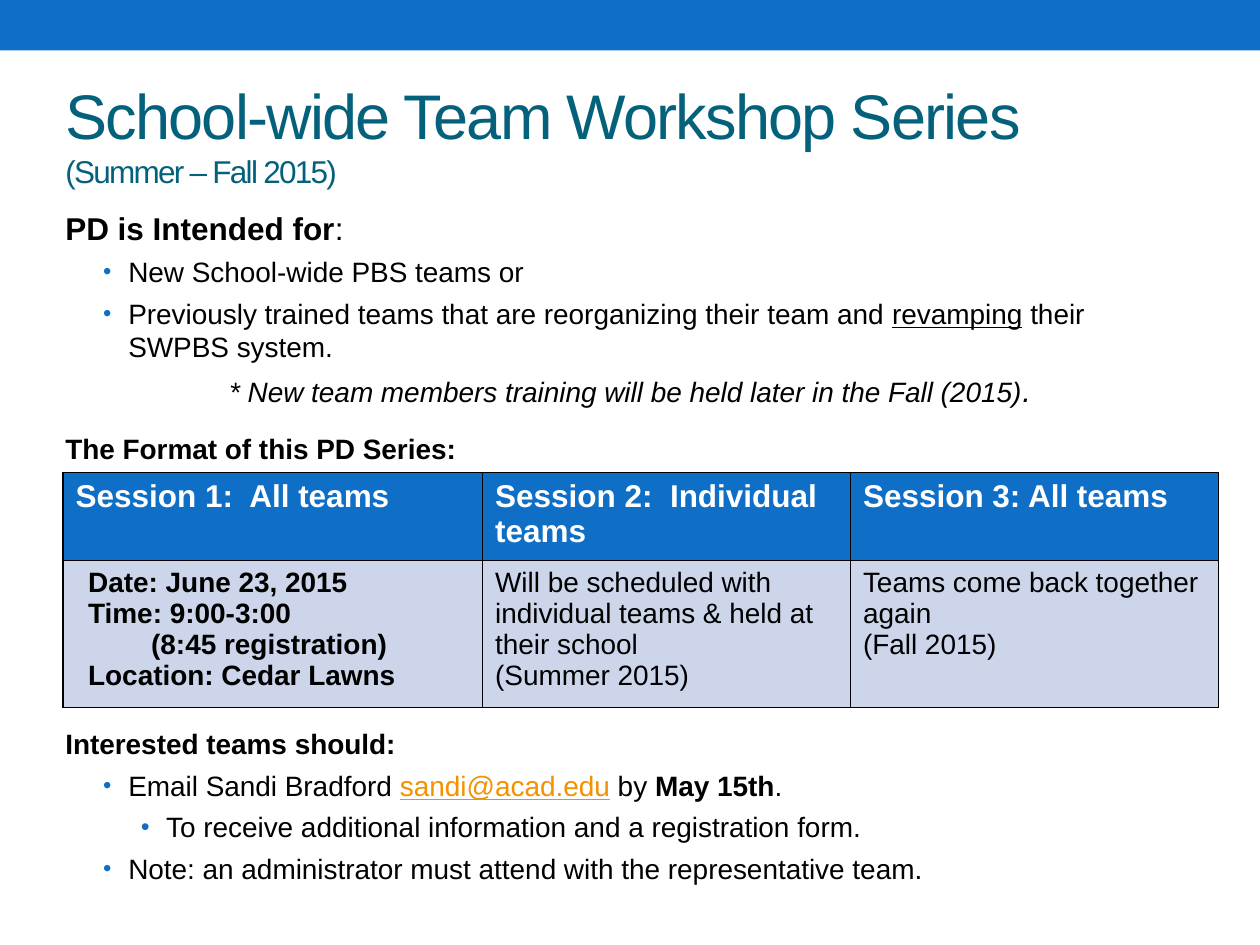
import pptx
import pptx.util
import pptx.dml.color
import pptx.enum.shapes
import pptx.enum.text
import pptx.oxml.ns
from dataclasses import dataclass
from lxml import etree

Inches, Pt = pptx.util.Inches, pptx.util.Pt
qn = pptx.oxml.ns.qn


@dataclass(frozen=True)
class Theme:
    font: str = "Arial"
    blue: str = "0F6FC6"
    teal: str = "04617B"
    link: str = "F49100"
    pale: str = "CCD5EA"
    ink: str = "000000"
    white: str = "FFFFFF"
    title: float = 36
    head: float = 18
    body: float = 16
    gap: float = 4.5


T = Theme()


def rgb(code):
    return pptx.dml.color.RGBColor.from_string(code)


def style(run, size=T.body, color=T.ink, bold=False, italic=False, under=False):
    font = run.font
    font.name, font.size = T.font, Pt(size)
    font.color.rgb = rgb(color)
    font.bold, font.italic, font.underline = bold, italic, under


def indent(para, left, hang=0.0):
    props = para._p.get_or_add_pPr()
    props.set("marL", str(Inches(left)))
    props.set("indent", str(-Inches(hang)))
    return props


def bullet(para, left, size):
    props = indent(para, left, 0.2)
    color = etree.SubElement(props, qn("a:buClr"))
    etree.SubElement(color, qn("a:srgbClr"), val=T.blue)
    etree.SubElement(props, qn("a:buSzPct"), val=str(size * 1000))
    etree.SubElement(props, qn("a:buFont"), typeface=T.font)
    etree.SubElement(props, qn("a:buChar"), char="•")


def text_box(slide, box):
    frame = slide.shapes.add_textbox(*map(Inches, box)).text_frame
    frame.word_wrap = True
    return frame


def add_band(slide, box):
    band = slide.shapes.add_shape(
        pptx.enum.shapes.MSO_SHAPE.RECTANGLE, *map(Inches, box))
    band.shadow.inherit = False
    band.fill.solid()
    band.fill.fore_color.rgb = rgb(T.blue)
    band.line.fill.background()


def add_title(slide, box, main, sub):
    frame = text_box(slide, box)
    frame.vertical_anchor = pptx.enum.text.MSO_ANCHOR.MIDDLE
    frame.text = main + "\v" + sub
    for run, size in zip(frame.paragraphs[0].runs, (T.title, T.head)):
        style(run, size, T.teal)
        run._r.get_or_add_rPr().set("spc", "-100")


def add_block(slide, box, lines):
    """Each line is (level, runs); each run is (text, format)."""
    frame = text_box(slide, box)
    for num, (level, runs) in enumerate(lines):
        para = frame.add_paragraph() if num else frame.paragraphs[0]
        para.space_before = Pt(T.gap if num else 0)
        if level == "item":
            bullet(para, 0.5, 85)
        elif level == "sub":
            bullet(para, 0.8, 90)
        elif level == "note":
            indent(para, 1.3)
        for text, form in runs:
            run = para.add_run()
            run.text = text
            style(run, **form)


def fill_cell(cell, fill, lines, insets, **form):
    cell.fill.solid()
    cell.fill.fore_color.rgb = rgb(fill)
    cell.text_frame.text = "\n".join(lines)
    for para, left in zip(cell.text_frame.paragraphs, insets):
        indent(para, left)
        for run in para.runs:
            style(run, **form)
    # Borders must come before the fill
    props = cell._tc.get_or_add_tcPr()
    for num, side in enumerate(("lnL", "lnR", "lnT", "lnB")):
        line = etree.Element(qn("a:" + side), w=str(Pt(1)))
        solid = etree.SubElement(line, qn("a:solidFill"))
        etree.SubElement(solid, qn("a:srgbClr"), val=T.ink)
        props.insert(num, line)


def add_grid(slide, box, cols, rows, data):
    grid = slide.shapes.add_table(
        len(rows), len(cols), *map(Inches, box)).table
    for col, width in zip(grid.columns, cols):
        col.width = Inches(width)
    for row, height in zip(grid.rows, rows):
        row.height = Inches(height)
    for num, (head, lines, insets) in enumerate(data):
        fill_cell(grid.cell(0, num), T.blue, [head], [0],
                  size=T.head, color=T.white, bold=True)
        fill_cell(grid.cell(1, num), T.pale, lines, insets, bold=num == 0)


BOLD = {"bold": True}
INTRO = [
    ("head", [("PD is Intended for", {"size": T.head, "bold": True}),
              (":", {"size": T.head})]),
    ("item", [("New School-wide PBS teams or", {})]),
    ("item", [("Previously trained teams that are reorganizing their team and ", {}),
              ("revamping", {"under": True}),
              (" their SWPBS system.", {})]),
    ("note", [("* New team members training will be held later in the Fall (2015)",
               {"italic": True}),
              (".", {"size": T.head, "italic": True})]),
]
FORMAT = [("head", [("The Format of this PD Series:", BOLD)])]
STEPS = [
    ("head", [("Interested teams should:", BOLD)]),
    ("item", [("Email Sandi Bradford ", {}),
              ("sandi@acad.edu", {"color": T.link, "under": True}),
              (" by ", {}), ("May 15th", BOLD), (".", {})]),
    ("sub", [("To receive additional information and a registration form.", {})]),
    ("item", [("Note: an administrator must attend with the representative team.", {})]),
]
SESSIONS = [
    ("Session 1:  All teams",
     ["Date: June 23, 2015", "Time: 9:00-3:00", "(8:45 registration)",
      "Location: Cedar Lawns"], [0.1, 0.1, 0.6, 0.1]),
    ("Session 2:  Individual teams",
     ["Will be scheduled with individual teams & held at their school",
      "(Summer 2015)"], [0, 0]),
    ("Session 3: All teams",
     ["Teams come back together again", "(Fall 2015)"], [0, 0]),
]


def main():
    deck = pptx.Presentation()
    deck.slide_width, deck.slide_height = Inches(10), Inches(7.5)
    slide = deck.slides.add_slide(deck.slide_layouts[6])
    left, width = 0.42, 9

    # Header
    add_band(slide, (0, 0, 10, 0.4))
    add_title(slide, (left, 0.52, width, 1.08),
              "School-wide Team Workshop Series", "(Summer – Fall 2015)")

    # Audience
    add_block(slide, (left, 1.61, width, 1.7), INTRO)

    # Sessions
    add_block(slide, (left, 3.38, width, 0.36), FORMAT)
    add_grid(slide, (0.5, 3.75, 9.17, 1.75),
             (3.33, 2.92, 2.92), (0.66, 1.09), SESSIONS)

    # Next steps
    add_block(slide, (left, 5.72, width, 1.4), STEPS)
    deck.save("out.pptx")


if __name__ == "__main__":
    main()
